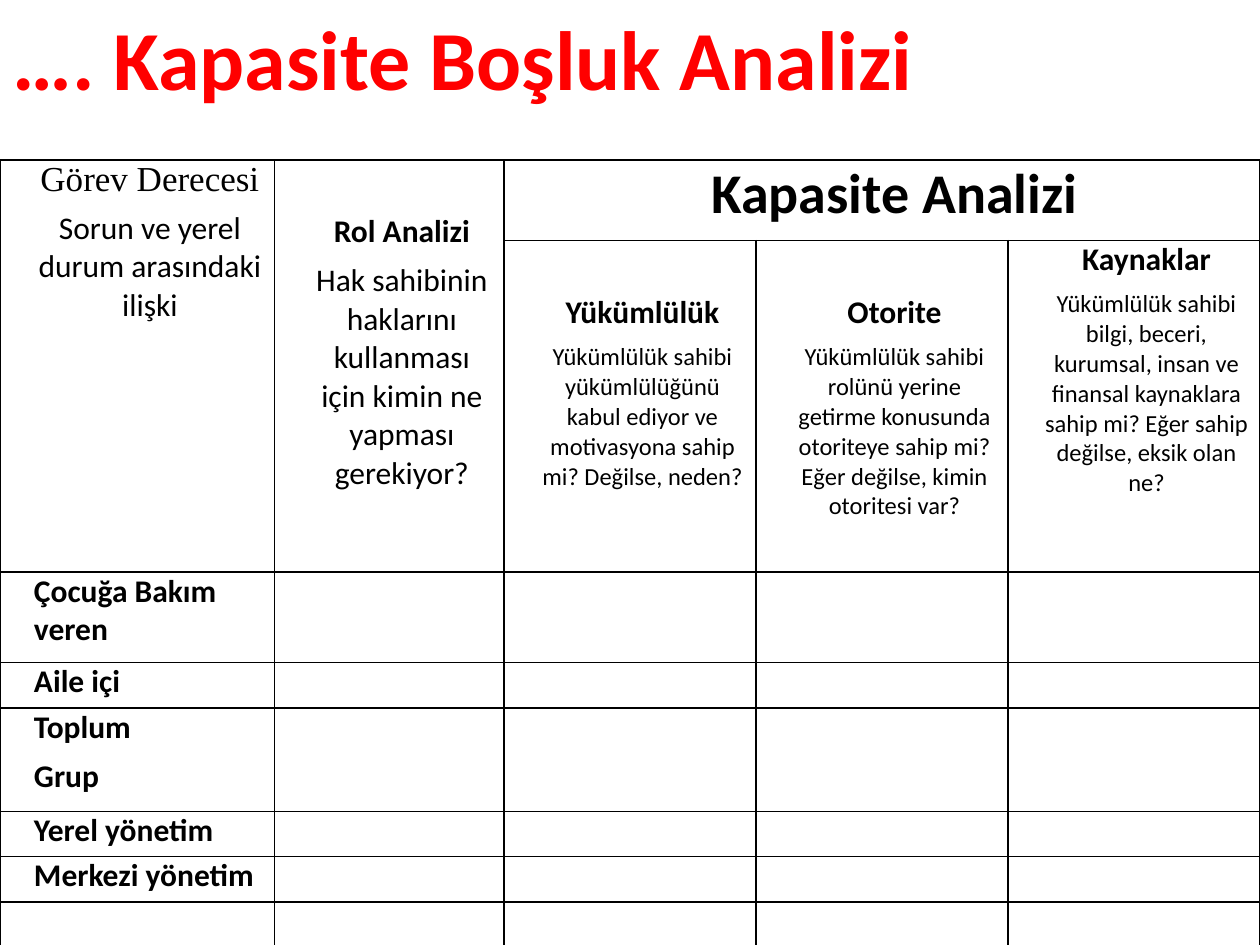
from lxml import etree
from pptx import Presentation
from pptx.dml.color import RGBColor
from pptx.enum.text import PP_ALIGN
from pptx.oxml.ns import qn
from pptx.util import Inches, Pt

CENTER, LEFT = PP_ALIGN.CENTER, PP_ALIGN.LEFT
NO_STYLE = "{2D5ABB26-0587-4C30-8999-92F81FD0307C}"
BLACK, RED = "000000", "FF0000"
BODY, SERIF = "Calibri", "Times New Roman"

# Content
TITLE = "…. Kapasite Boşluk Analizi"
COLUMNS = [2.18, 1.82, 2, 2, 2]
ROWS = [0.4, 0.64, 2.63, 0.72, 0.36, 0.82, 0.36, 0.36, 0.36]
TABLE_TOP = 0.87
LOWERED = 0.42  # headings that start one line down

# (row, column, rows spanned, columns spanned, top inset, paragraphs)
# paragraph: text, size, bold, font
HEADINGS = [
    (0, 0, 1, 5, 0, []),
    (1, 0, 2, 1, 0, [
        ("Görev Derecesi", 20, False, SERIF),
        ("Sorun ve yerel durum arasındaki ilişki", 18, False, BODY)]),
    (1, 1, 2, 1, LOWERED, [
        ("Rol Analizi", 18, True, BODY),
        ("Hak sahibinin haklarını kullanması için kimin ne yapması gerekiyor?",
         18, False, BODY)]),
    (1, 2, 1, 3, 0, [("Kapasite Analizi", 32, True, BODY)]),
]
CAPACITIES = [
    ("Yükümlülük", LOWERED,
     "Yükümlülük sahibi yükümlülüğünü kabul ediyor ve motivasyona sahip mi? "
     "Değilse, neden?"),
    ("Otorite", LOWERED,
     "Yükümlülük sahibi rolünü yerine getirme konusunda otoriteye sahip mi? "
     "Eğer değilse, kimin otoritesi var?"),
    ("Kaynaklar", 0,
     "Yükümlülük sahibi bilgi, beceri, kurumsal, insan ve finansal kaynaklara "
     "sahip mi? Eğer sahip değilse, eksik olan ne?"),
]
DUTY_BEARERS = [["Çocuğa Bakım veren"], ["Aile içi"], ["Toplum", "Grup"],
                ["Yerel yönetim"], ["Merkezi yönetim"]]


def style_font(paragraph, size, bold, name, color):
    font = paragraph.font
    font.size, font.bold, font.name = Pt(size), bold, name
    font.color.rgb = RGBColor.from_string(color)


def write_cell(cell, paragraphs, align, top=0):
    cell.margin_top = Inches(top)
    frame = cell.text_frame
    for i, (text, size, bold, name) in enumerate(paragraphs):
        paragraph = frame.add_paragraph() if i else frame.paragraphs[0]
        paragraph.text = text
        paragraph.alignment = align
        paragraph.space_after = Pt(6)
        style_font(paragraph, size, bold, name, BLACK)
        properties = paragraph._p.get_or_add_pPr()
        properties.set("marL", str(Inches(0.2)))
        properties.set("indent", "0")


def draw_borders(cell, visible):
    properties = cell._tc.get_or_add_tcPr()
    for side in "LRTB":
        line = etree.SubElement(properties, qn(f"a:ln{side}"), w=str(Pt(1)))
        if side in visible:
            fill = etree.SubElement(line, qn("a:solidFill"))
            etree.SubElement(fill, qn("a:srgbClr"), val=BLACK)
        else:
            etree.SubElement(line, qn("a:noFill"))


prs = Presentation()
prs.slide_width, prs.slide_height = Inches(10), Inches(7.5)
slide = prs.slides.add_slide(prs.slide_layouts[6])

# Table grid
frame = slide.shapes.add_table(len(ROWS), len(COLUMNS), 0, Inches(TABLE_TOP),
                               Inches(sum(COLUMNS)), Inches(sum(ROWS)))
table = frame.table
table.first_row = table.horz_banding = False
table._tbl.tblPr.find(qn("a:tableStyleId")).text = NO_STYLE
for column, width in zip(table.columns, COLUMNS):
    column.width = Inches(width)
for r, (row, height) in enumerate(zip(table.rows, ROWS)):
    row.height = Inches(height)
    for cell in row.cells:
        cell.margin_left = cell.margin_right = Inches(0.07)
        cell.margin_top = cell.margin_bottom = 0
        draw_borders(cell, "LRTB" if r else "B")
        cell.fill.background()

# Headings
for r, c, down, across, top, paragraphs in HEADINGS:
    cell = table.cell(r, c)
    cell.merge(table.cell(r + down - 1, c + across - 1))
    write_cell(cell, paragraphs, CENTER, top)
for c, (name, top, question) in enumerate(CAPACITIES, start=2):
    write_cell(table.cell(2, c),
               [(name, 18, True, BODY), (question, 14, False, BODY)], CENTER, top)

# Duty bearers
for r, names in enumerate(DUTY_BEARERS, start=3):
    write_cell(table.cell(r, 0), [(name, 18, True, BODY) for name in names], LEFT)

# Title
title = slide.shapes.add_textbox(0, 0, Inches(9.22), Inches(0.91)).text_frame
title.word_wrap = True
title.text = TITLE
style_font(title.paragraphs[0], 48, True, BODY, RED)

prs.save("out.pptx")
